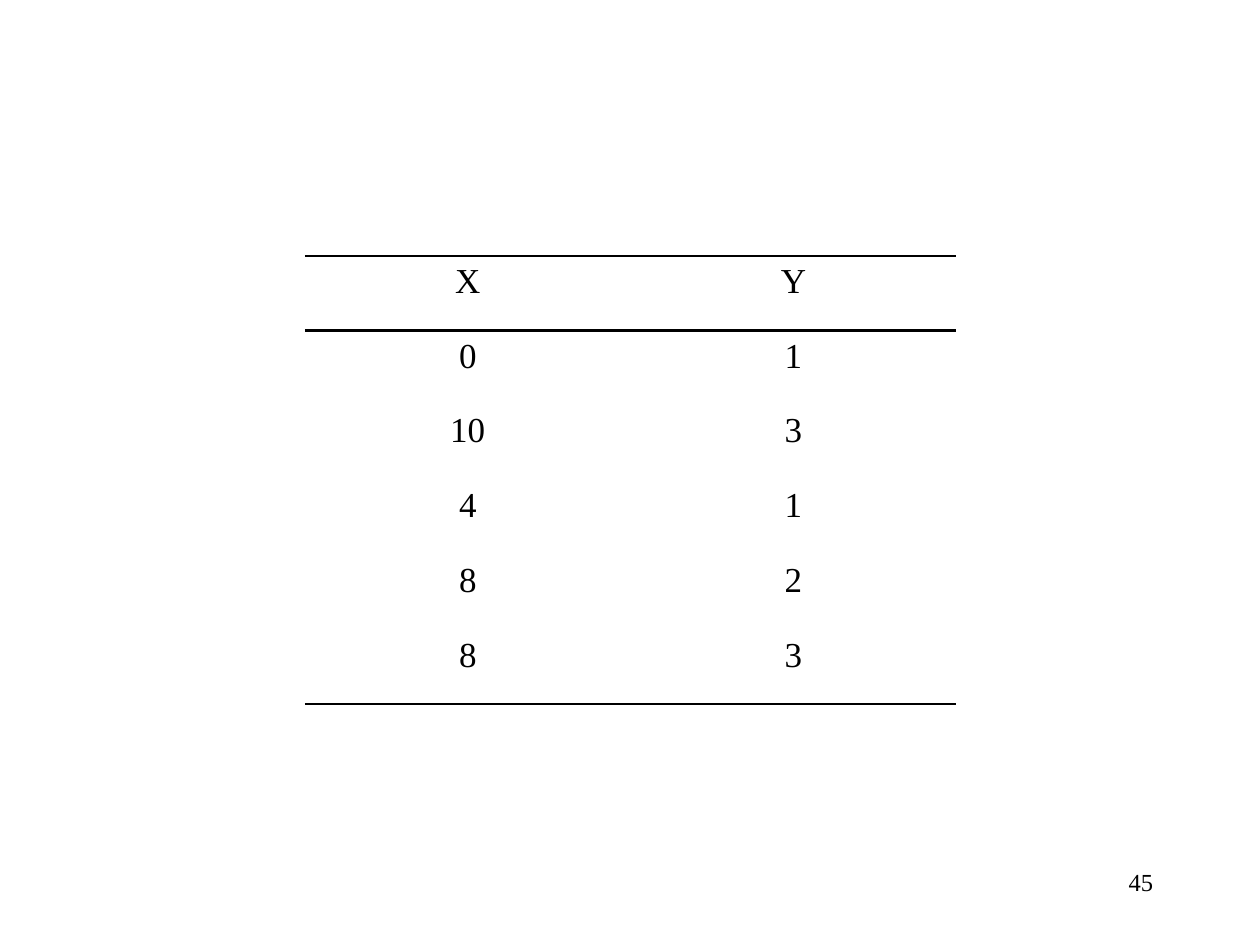
from lxml.etree import SubElement
from pptx import Presentation
from pptx.dml.color import RGBColor
from pptx.enum.text import PP_ALIGN
from pptx.oxml.ns import qn
from pptx.util import Inches, Pt

HEAD = ("X", "Y")
DATA = [(0, 1), (10, 3), (4, 1), (8, 2), (8, 3)]
PAGE = "45"
BLACK = RGBColor(0, 0, 0)
FONT = "Times New Roman"
RULES = (0, 1, len(DATA) + 1)
WIDE, HIGH = Inches(10), Inches(7.5)


def write(frame, text, size=20, align=PP_ALIGN.CENTER):
    frame.word_wrap = True
    par = frame.paragraphs[0]
    par.alignment = align
    run = par.add_run()
    run.text = str(text)
    run.font.size = Pt(size)
    run.font.name = FONT
    run.font.color.rgb = BLACK


def border(cell, sides):
    props = cell._tc.get_or_add_tcPr()
    for side in "LRTB":
        line = SubElement(props, qn("a:ln" + side), w=str(Pt(1.5)))
        if side in sides:
            fill = SubElement(line, qn("a:solidFill"))
            SubElement(fill, qn("a:srgbClr"), val=str(BLACK))
        else:
            SubElement(line, qn("a:noFill"))


def main():
    deck = Presentation()
    deck.slide_width, deck.slide_height = WIDE, HIGH
    slide = deck.slides.add_slide(deck.slide_layouts[6])
    rows = [HEAD, *DATA]
    grid = slide.shapes.add_table(
        len(rows), len(HEAD), Inches(2.42), Inches(2.03),
        Inches(5.17), Inches(3.56)).table
    grid.first_row = grid.horz_banding = False
    for r, row in enumerate(rows):
        sides = "T" * (r in RULES) + "B" * (r + 1 in RULES)
        for c, text in enumerate(row):
            cell = grid.cell(r, c)
            border(cell, sides)
            cell.fill.background()
            write(cell.text_frame, text)
    box = slide.shapes.add_textbox(
        Inches(7.17), Inches(6.83), Inches(2.08), Inches(0.5))
    write(box.text_frame, PAGE, size=14, align=PP_ALIGN.RIGHT)
    deck.save("out.pptx")


if __name__ == "__main__":
    main()
